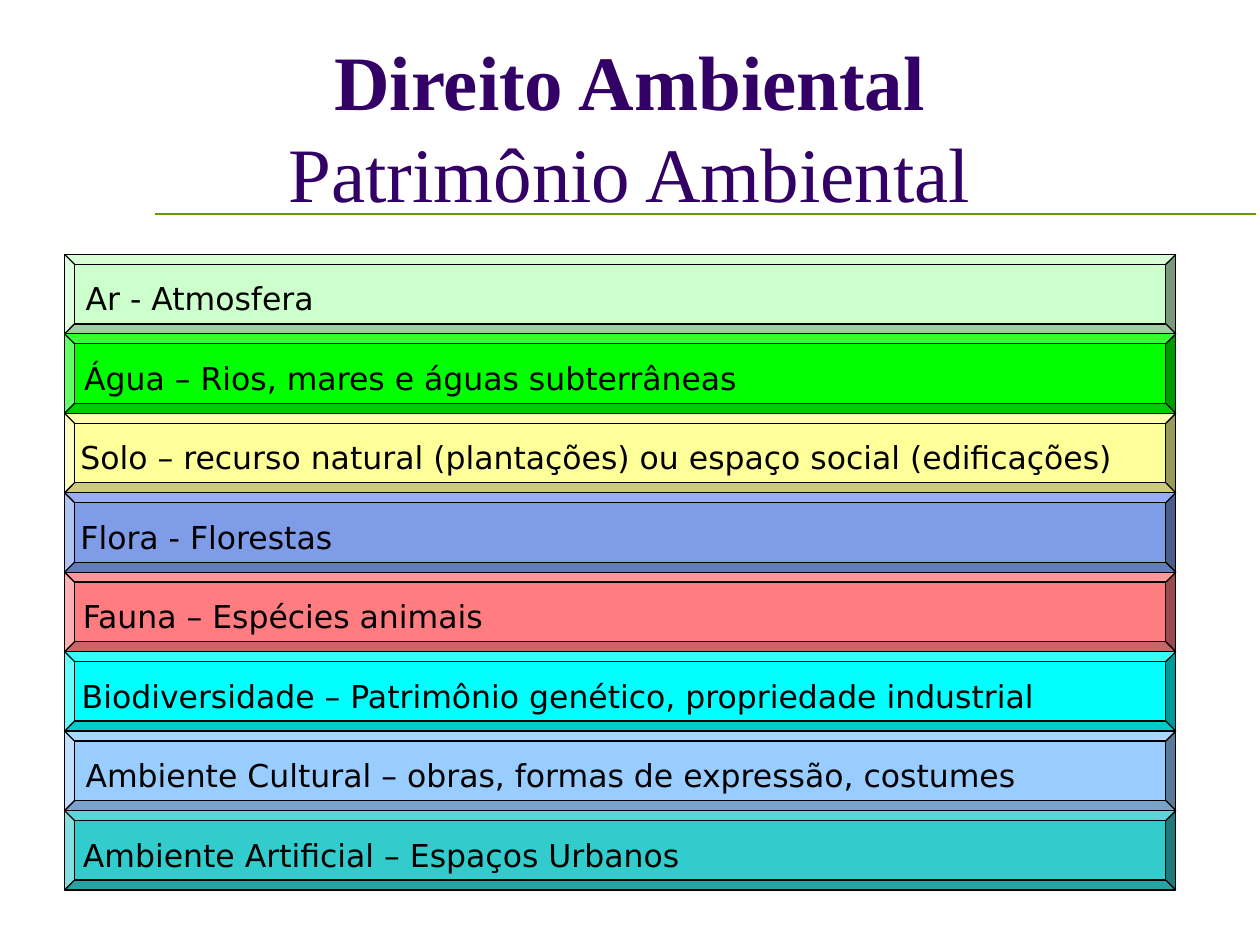
import pptx
import pptx.dml.color
import pptx.enum.shapes
import pptx.enum.text
import pptx.oxml
import pptx.oxml.ns
import pptx.util

Pt = pptx.util.Pt
RGB = pptx.dml.color.RGBColor.from_string
ANCHOR = pptx.enum.text.MSO_ANCHOR
ALIGN = pptx.enum.text.PP_ALIGN
AUTO = pptx.enum.text.MSO_AUTO_SIZE
SHAPE = pptx.enum.shapes.MSO_SHAPE

THEME = {
    "title": {"name": "Times New Roman", "size": Pt(44)},
    "label": {"name": "DejaVu Sans", "size": Pt(18)},
    "title_color": RGB("330066"),
    "ink": RGB("000000"),
    "rule": RGB("669900"),
}


def set_font(font, style, color, bold=False):
    for key, value in {**style, "bold": bold}.items():
        setattr(font, key, value)
    font.color.rgb = color


prs = pptx.Presentation()
prs.slide_width, prs.slide_height = Pt(720), Pt(540)
s = prs.slides.add_slide(prs.slide_layouts[6])

rule = s.shapes.add_connector(
    pptx.enum.shapes.MSO_CONNECTOR.STRAIGHT, Pt(88.8), Pt(122.4), Pt(718), Pt(122.4))
rule.line.color.rgb = THEME["rule"]
rule.line.width = Pt(1)
rule._element.spPr.append(pptx.oxml.parse_xml(
    f'<a:effectLst {pptx.oxml.ns.nsdecls("a")}/>'))

tf = s.shapes.add_textbox(Pt(36), Pt(38), Pt(648), Pt(90)).text_frame
for key, value in {"word_wrap": True, "vertical_anchor": ANCHOR.BOTTOM}.items():
    setattr(tf, key, value)
p = tf.paragraphs[0]
p.alignment = ALIGN.CENTER
set_font(p.font, THEME["title"], THEME["title_color"])
for text, bold in [("Direito Ambiental", True), ("Patrimônio Ambiental", False)]:
    if p.runs:
        p.add_line_break()
    r = p.add_run()
    r.text = text
    set_font(r.font, THEME["title"], THEME["title_color"], bold)

bars = [
    ("Ar - Atmosfera", "CCFFCC", 41.8, 147.6),
    ("Água – Rios, mares e águas subterrâneas", "00FF00", 41, 392.4),
    ("Solo – recurso natural (plantações) ou espaço social (edificações)",
     "FFFF99", 38.9, 609.8),
    ("Flora - Florestas", "7E9CE8", 38.9, 161.3),
    ("Fauna – Espécies animais", "FF7C80", 40.3, 247),
    ("Biodiversidade – Patrimônio genético, propriedade industrial",
     "00FFFF", 39.6, 562.3),
    ("Ambiente Cultural – obras, formas de expressão, costumes",
     "99CCFF", 41.8, 552.2),
    ("Ambiente Artificial – Espaços Urbanos", "33CCCC", 40.3, 364.3),
]
TOP, STEP = 145.4, 45.4

for i, (text, color, left, width) in enumerate(bars):
    y = TOP + i * STEP
    sp = s.shapes.add_shape(SHAPE.BEVEL, Pt(36.9), Pt(y), Pt(635), Pt(STEP))
    sp.shadow.inherit = False
    sp.adjustments[0] = 0.125
    sp.fill.solid()
    sp.fill.fore_color.rgb = RGB(color)
    sp.line.color.rgb = THEME["ink"]
    sp.line.width = Pt(0.75)

    tf = s.shapes.add_textbox(Pt(left), Pt(y + 10.8), Pt(width), Pt(28.8)).text_frame
    for key, value in {"word_wrap": False, "auto_size": AUTO.SHAPE_TO_FIT_TEXT}.items():
        setattr(tf, key, value)
    p = tf.paragraphs[0]
    p.alignment = ALIGN.JUSTIFY
    p.space_after = Pt(15)
    for key, value in {"marL": Pt(27), "indent": -Pt(27)}.items():
        p._p.get_or_add_pPr().set(key, str(value))
    r = p.add_run()
    r.text = text
    set_font(r.font, THEME["label"], THEME["ink"])

prs.save("out.pptx")
